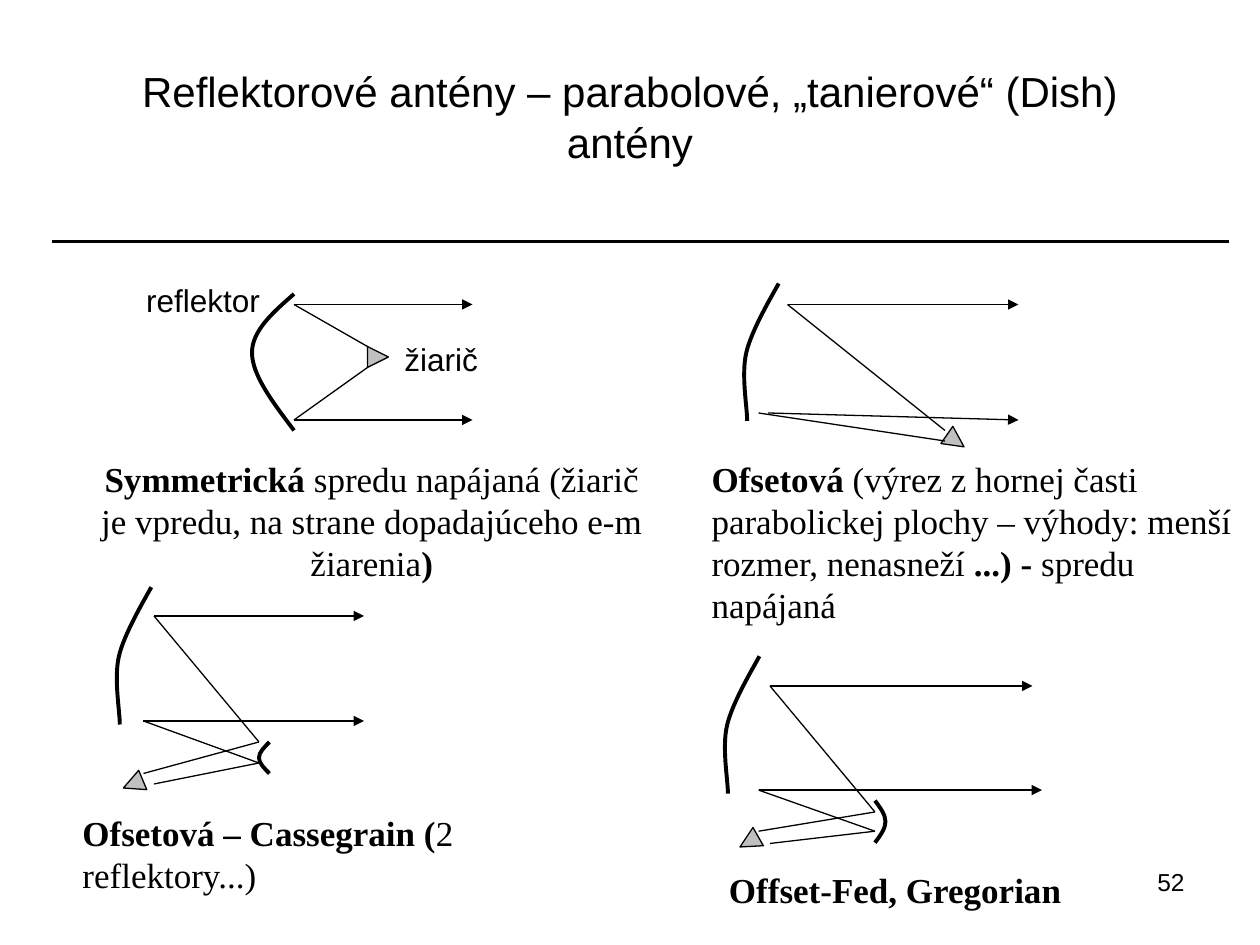
from pptx import Presentation
from pptx.dml.color import RGBColor
from pptx.enum.shapes import MSO_CONNECTOR
from pptx.enum.text import MSO_ANCHOR as Anchor, PP_ALIGN as Align
from pptx.oxml import parse_xml
from pptx.oxml.ns import nsdecls, qn
from pptx.util import Pt

COLORS = {"ink": "000000", "feed": "C0C0C0"}
OFFSET_DISH = [(0, 0), (-3.5, 6.5), (-15.5, 26.5), (-18.5, 39.5),
               (-21.5, 52.5), (-18, 70.5), (-18, 78.5)]
SYMMETRIC_DISH = [(0, 0), (-12, 10.5), (-24, 21), (-24, 33.5),
                  (-24, 46.5), (-12, 62), (0, 78)]
CONVEX_MIRROR = [(0, 0), (-3, 3), (-6, 6), (-6, 9), (-6, 12), (-3, 15), (0, 18)]
CONCAVE_MIRROR = [(0, 0), (3, 4), (6, 8), (6, 12), (6, 16), (3, 20), (0, 24)]


class SlideBuilder:
    """Draws styled antenna diagram elements on one slide, in points."""

    serif = {"name": "Times New Roman", "size": Pt(20)}
    sans = {"name": "Arial", "size": Pt(18)}
    thick, thin = 2.25, 0.75

    def __init__(self, presentation):
        self.slide = presentation.slides.add_slide(presentation.slide_layouts[5])
        self.shapes = self.slide.shapes

    def color(self, name):
        return RGBColor.from_string(COLORS[name])

    def stroke(self, shape, width):
        shape.line.color.rgb = self.color("ink")
        shape.line.width = Pt(width)

    def fill_text(self, shape, box, runs, style, align=Align.LEFT, anchor=Anchor.TOP):
        shape.left, shape.top, shape.width, shape.height = map(Pt, box)
        frame = shape.text_frame
        frame.word_wrap = True
        frame.vertical_anchor = anchor
        paragraph = frame.paragraphs[0]
        paragraph.alignment = align
        for text, bold in runs:
            run = paragraph.add_run()
            run.text = text
            for attribute, value in {**style, "bold": bold}.items():
                setattr(run.font, attribute, value)
            run.font.color.rgb = self.color("ink")

    def title(self, box, text):
        self.fill_text(self.shapes.title, box, [(text, False)],
                       {**self.sans, "size": Pt(24)}, Align.CENTER, Anchor.MIDDLE)

    def text(self, box, runs, style, align=Align.LEFT):
        self.fill_text(self.shapes.add_textbox(0, 0, 0, 0), box, runs, style, align)

    def line(self, start, end, width=thin, arrow=False):
        connector = self.shapes.add_connector(
            MSO_CONNECTOR.STRAIGHT, *map(Pt, (*start, *end)))
        self.stroke(connector, width)
        properties = connector._element.spPr
        if arrow:
            properties.find(qn("a:ln")).append(
                parse_xml(f'<a:tailEnd {nsdecls("a")} type="triangle"/>'))
        properties.append(parse_xml(f'<a:effectLst {nsdecls("a")}/>'))

    def ray(self, *points, arrow=True):
        last = len(points) - 2
        for index, (start, end) in enumerate(zip(points, points[1:])):
            self.line(start, end, arrow=arrow and index == last)

    def outline(self, points, width, close):
        points = [(Pt(x), Pt(y)) for x, y in points]
        builder = self.shapes.build_freeform(*points[0])
        builder.add_line_segments(points[1:], close=close)
        shape = builder.convert_to_shape()
        shape.shadow.inherit = False
        self.stroke(shape, width)
        return shape

    def reflector(self, left, top, profile):
        shape = self.outline([(left + x, top + y) for x, y in profile], self.thick, False)
        shape.fill.background()
        segments = list(shape._element.iter(qn("a:lnTo")))
        for start in range(0, len(segments), 3):
            curve = parse_xml(f'<a:cubicBezTo {nsdecls("a")}/>')
            segments[start].addprevious(curve)
            for segment in segments[start:start + 3]:
                curve.append(segment[0])
                segment.getparent().remove(segment)

    def feed(self, left, top, rotation=0):
        corners = [(left, top), (left + 12, top + 6), (left, top + 12)]
        shape = self.outline(corners, self.thin, True)
        shape.fill.solid()
        shape.fill.fore_color.rgb = self.color("feed")
        shape.rotation = rotation


def main():
    presentation = Presentation()
    presentation.slide_width, presentation.slide_height = Pt(720), Pt(540)
    slide = SlideBuilder(presentation)
    serif, sans = slide.serif, slide.sans

    slide.title((36, 21.5, 648, 90),
                "Reflektorové antény – parabolové, „tanierové“ (Dish) antény")
    slide.line((30, 138), (702, 138), slide.thick)
    slide.text((516, 492, 168, 37.5), [("52", False)],
               {**sans, "size": Pt(14)}, Align.RIGHT)

    slide.reflector(168, 168, SYMMETRIC_DISH)
    slide.feed(210, 198)
    slide.ray((210, 198), (168, 174), (270, 174))
    slide.ray((210, 210), (168, 240), (270, 240))
    slide.text((76.5, 157, 102, 29), [("reflektor", False)], sans)
    slide.text((224, 191, 102, 29), [("žiarič", False)], sans)
    slide.text((48, 258, 329, 79),
               [("Symmetrická ", True),
                ("spredu napájaná (žiarič je vpredu, na strane dopadajúceho "
                 "e-m žiarenia", False),
                (")", True)], serif, Align.CENTER)

    slide.reflector(445, 162, OFFSET_DISH)
    slide.feed(540, 246, 34.7)
    slide.ray((540, 246), (450, 174), (582, 174))
    slide.ray((540, 252), (433.5, 236), arrow=False)
    slide.ray((439, 236), (582, 240))
    slide.text((399.5, 258, 320.5, 103),
               [("Ofsetová ", True),
                ("(výrez z hornej časti parabolickej plochy – výhody: menší "
                 "rozmer, nenasneží", False),
                (" ...) - ", True),
                ("spredu napájaná", False)], serif)

    slide.reflector(86.5, 335.5, OFFSET_DISH)
    slide.reflector(154, 424, CONVEX_MIRROR)
    slide.feed(70, 442, 157.5)
    slide.ray((88, 448), (148, 436), (82, 412), (208, 412))
    slide.ray((82, 442), (148, 424), (88, 352), (208, 352))
    slide.text((40, 460, 240, 55),
               [("Ofsetová – Cassegrain (", True), ("2 reflektory...)", False)], serif)

    slide.reflector(434, 375, OFFSET_DISH)
    slide.reflector(500, 457.5, CONCAVE_MIRROR)
    slide.feed(422, 475, 150.3)
    slide.ray((440, 482), (500, 475), (433.5, 451.5), (595.5, 451.5))
    slide.ray((433.5, 475), (500, 464), (440, 392), (590, 392))
    slide.text((409.5, 493, 210, 31), [("Offset-Fed, Gregorian", True)], serif)

    presentation.save("out.pptx")


if __name__ == "__main__":
    main()
